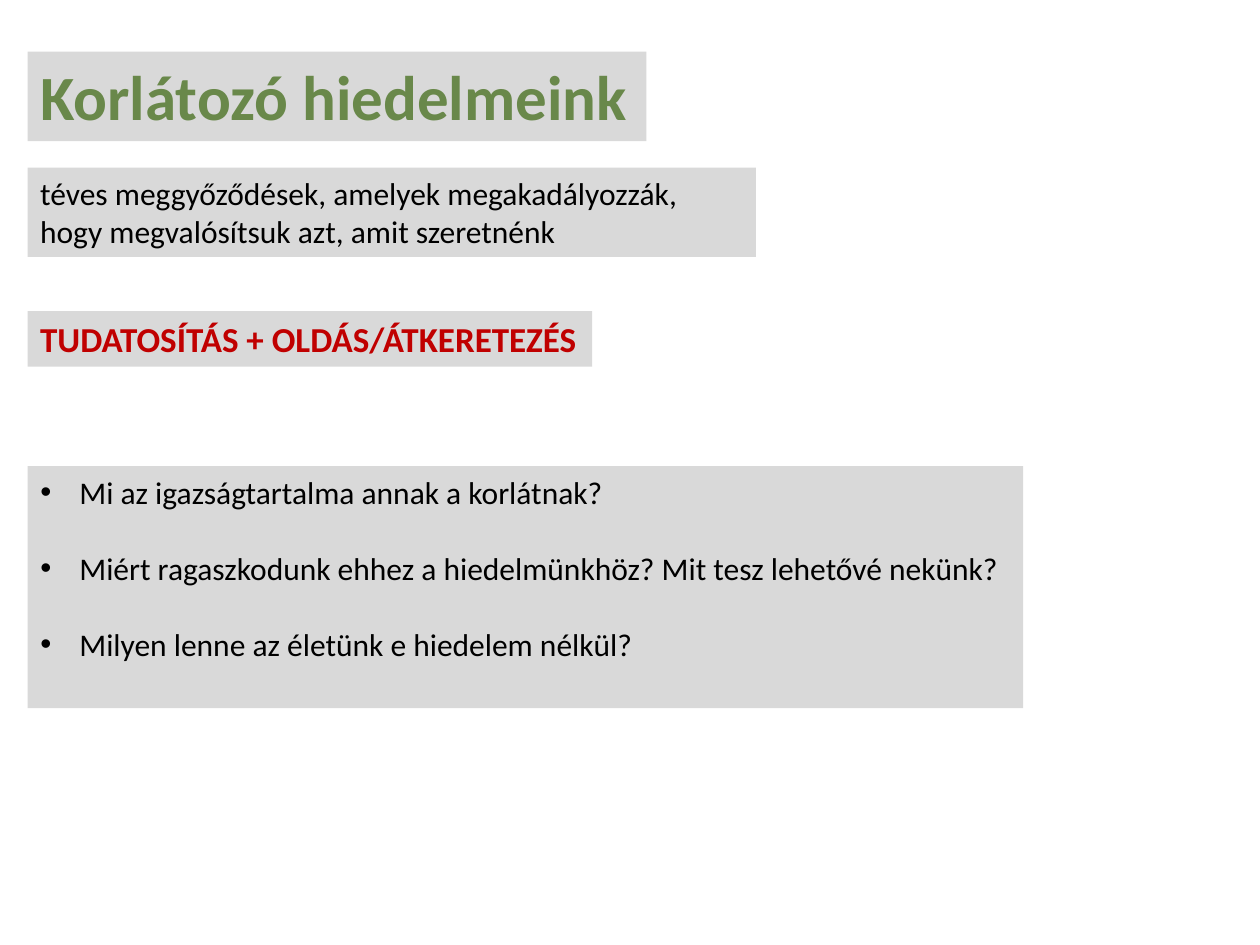
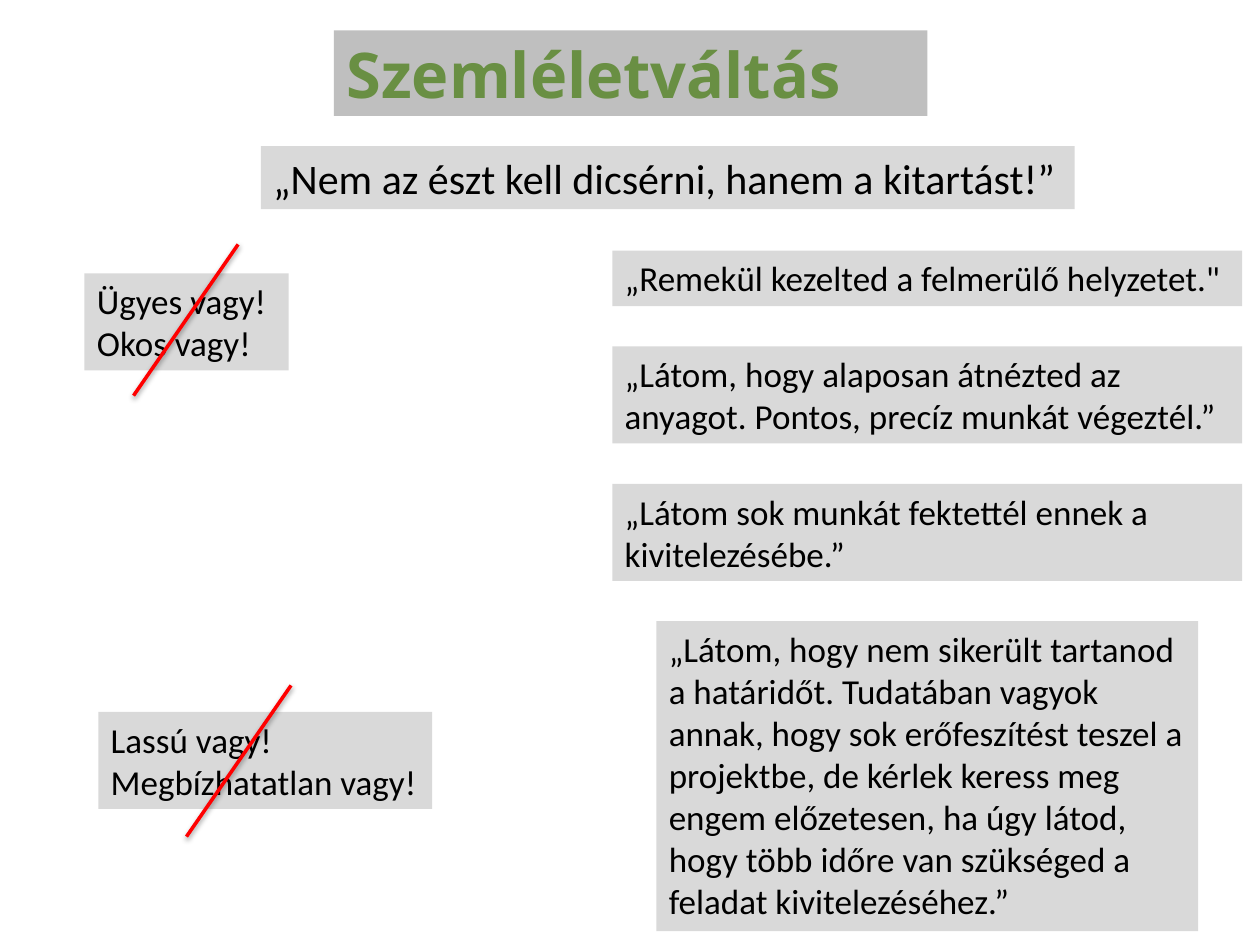
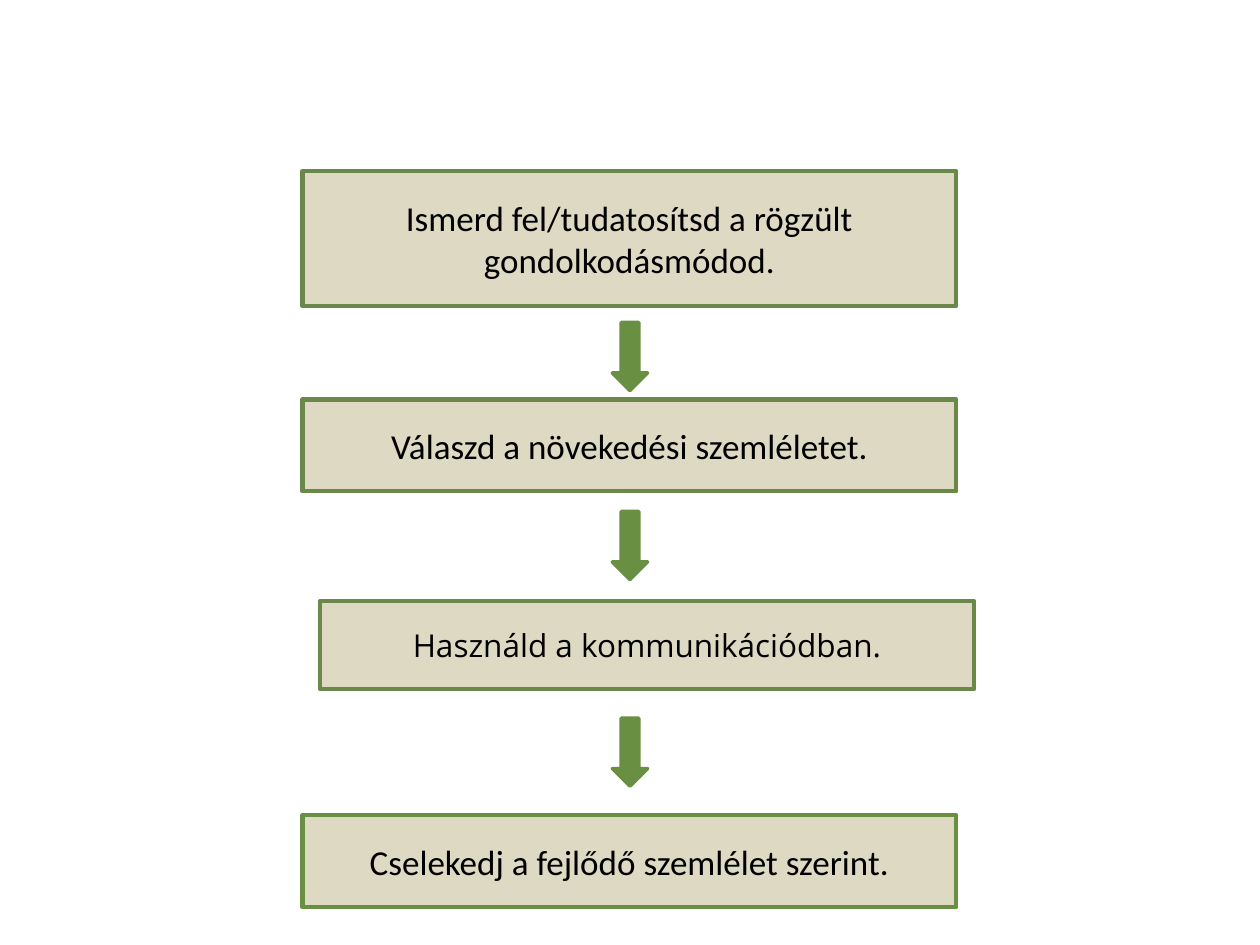
from lxml import etree
from pptx import Presentation
from pptx.dml.color import RGBColor
from pptx.enum.shapes import MSO_CONNECTOR, MSO_SHAPE
from pptx.enum.text import MSO_ANCHOR, MSO_AUTO_SIZE, PP_ALIGN
from pptx.oxml import parse_xml
from pptx.oxml.ns import nsdecls
from pptx.util import Inches, Pt

RECTANGLE, DOWN_ARROW = MSO_SHAPE.RECTANGLE, MSO_SHAPE.DOWN_ARROW
STRAIGHT = MSO_CONNECTOR.STRAIGHT
LEFT, CENTER = PP_ALIGN.LEFT, PP_ALIGN.CENTER
TOP, MIDDLE = MSO_ANCHOR.TOP, MSO_ANCHOR.MIDDLE
NO_AUTOFIT = MSO_AUTO_SIZE.NONE

TITLE_AND_CONTENT, TITLE_ONLY, BLANK = 1, 5, 6
GREY, DARK_GREY, BEIGE = "D9D9D9", "BFBFBF", "DDD9C3"
GREEN, LEAF_GREEN = "69884A", "698F43"
BLACK, DARK_RED, RED = "000000", "C00000", "FF0000"
CALIBRI, OPEN_SANS = "Calibri", "Open Sans"


# Shared helpers
def color(hex_value):
    return RGBColor.from_string(hex_value)


def set_outline(line, hex_value, width):
    line.color.rgb = color(hex_value)
    line.width = Pt(width)


def place(shape, box):
    for side, value in zip(("left", "top", "width", "height"), box):
        setattr(shape, side, Inches(value))


def paint(shape, fill):
    shape.fill.solid()
    shape.fill.fore_color.rgb = color(fill)


def write(shape, lines, size=20, font=CALIBRI, text_color=BLACK, bold=False,
          align=LEFT, anchor=TOP, inset=None, gap=0, after=0, indent=0):
    frame = shape.text_frame
    settings = {"word_wrap": True, "auto_size": NO_AUTOFIT, "vertical_anchor": anchor}
    if inset is not None:
        for side in ("left", "top", "right", "bottom"):
            settings["margin_" + side] = Inches(inset)
    for name, value in settings.items():
        setattr(frame, name, value)
    frame.text = "\n".join(lines)
    for index, para in enumerate(frame.paragraphs):
        para.alignment = align
        para.space_before = Pt(gap if index else 0)
        para.space_after = Pt(after)
        if indent:
            properties = para._p.get_or_add_pPr()
            properties.set("marL", str(Inches(indent)))
            properties.set("indent", str(-Inches(indent)))
        for span in para.runs:
            formats = {"name": font, "size": Pt(size), "bold": bold}
            for name, value in formats.items():
                setattr(span.font, name, value)
            span.font.color.rgb = color(text_color)


def add_panel(page, box, fill=GREY, kind=RECTANGLE, outline=None, width=2.5):
    shape = page.shapes.add_shape(kind, *map(Inches, box))
    shape.shadow.inherit = False
    paint(shape, fill)
    if outline:
        set_outline(shape.line, outline, width)
    else:
        shape.line.fill.background()
    return shape


def add_note(page, box, *lines, **formats):
    write(add_panel(page, box), lines, **formats)


def fill_placeholder(shape, box, lines, fill=GREY, **formats):
    place(shape, box)
    paint(shape, fill)
    write(shape, lines, **formats)


def set_title(page, box, text, **formats):
    fill_placeholder(page.shapes.title, box, [text], size=36, bold=True, **formats)


def add_strike(page, left, top):
    strike = page.shapes.add_connector(
        STRAIGHT, *map(Inches, (left + 0.83, top, left, top + 1.2)))
    set_outline(strike.line, RED, 2)
    effects = parse_xml(f"<a:effectLst {nsdecls('a')}/>")
    namespace = "{%s}" % effects.nsmap["a"]
    shadow = etree.SubElement(effects, namespace + "outerShdw", blurRad=str(Pt(3.1)),
                              dist=str(Pt(1.6)), dir="5400000", rotWithShape="0")
    tint = etree.SubElement(shadow, namespace + "srgbClr", val=BLACK)
    etree.SubElement(tint, namespace + "alpha", val="38000")
    strike._element.spPr.append(effects)


# Limiting beliefs
def build_beliefs(deck):
    page = deck.slides.add_slide(deck.slide_layouts[TITLE_AND_CONTENT])
    left = 0.22
    set_title(page, (left, 0.41, 4.91, 0.71), "Korlátozó hiedelmeink", text_color=GREEN)
    add_note(page, (left, 1.33, 5.78, 0.71),
             "téves meggyőződések, amelyek megakadályozzák, "
             "hogy megvalósítsuk azt, amit szeretnénk", size=18)
    add_note(page, (left, 2.47, 4.48, 0.44), "TUDATOSÍTÁS + OLDÁS/ÁTKERETEZÉS",
             text_color=DARK_RED, bold=True)
    questions = [
        "Mi az igazságtartalma annak a korlátnak?",
        "Miért ragaszkodunk ehhez a hiedelmünkhöz? Mit tesz lehetővé nekünk?",
        "Milyen lenne az életünk e hiedelem nélkül?",
    ]
    fill_placeholder(page.placeholders[1], (left, 3.7, 7.9, 1.92), questions,
                     size=18, gap=22, indent=0.31)


# Praise and criticism, reworded
def add_praises(page, left, top, width, gap):
    praises = [
        ("„Remekül kezelted a felmerülő helyzetet.\"", 0.44, 0),
        ("„Látom, hogy alaposan átnézted az anyagot. Pontos, precíz munkát végeztél.”",
         0.77, 0),
        ("„Látom sok munkát fektettél ennek a kivitelezésébe.”", 0.77, 0),
        ("„Látom, hogy nem sikerült tartanod a határidőt. Tudatában vagyok annak, "
         "hogy sok erőfeszítést teszel a projektbe, de kérlek keress meg engem "
         "előzetesen, ha úgy látod, hogy több időre van szükséged a feladat "
         "kivitelezéséhez.”", 2.46, 0.35),
    ]
    for text, height, margin in praises:
        add_note(page, (left + margin, top, width - 2 * margin, height), text)
        top += height + gap


def build_mindset_change(deck):
    page = deck.slides.add_slide(deck.slide_layouts[TITLE_ONLY])
    set_title(page, (2.65, 0.24, 4.71, 0.68), "Szemléletváltás", fill=DARK_GREY,
              font=OPEN_SANS, text_color=LEAF_GREEN, anchor=MIDDLE)
    add_note(page, (2.07, 1.16, 6.46, 0.5),
             "„Nem az észt kell dicsérni, hanem a kitartást!”", size=24)
    add_praises(page, 4.86, 1.99, 5, 0.32)
    add_note(page, (0.67, 2.17, 1.62, 0.77), "Ügyes vagy!", "Okos vagy!")
    add_note(page, (0.78, 5.65, 2.65, 0.77), "Lassú vagy!", "Megbízhatatlan vagy!")
    add_strike(page, 1.06, 1.94)
    add_strike(page, 1.48, 5.44)


# Steps towards a growth mindset
def build_steps(deck):
    page = deck.slides.add_slide(deck.slide_layouts[BLANK])
    steps = [
        ("Ismerd fel/tudatosítsd a rögzült gondolkodásmódod.", 2.4, 1.36, 1.07, GREEN, {}),
        ("Válaszd a növekedési szemléletet.", 2.4, 3.17, 0.73, GREEN, {}),
        ("Használd a kommunikációdban.", 2.54, 4.77, 0.7, GREEN,
         {"size": 18, "font": OPEN_SANS}),
        ("Cselekedj a fejlődő szemlélet szerint.", 2.4, 6.47, 0.73, LEAF_GREEN, {}),
    ]
    for text, left, top, height, outline, formats in steps:
        step = add_panel(page, (left, top, 5.19, height), BEIGE, outline=outline)
        write(step, [text], align=CENTER, inset=0.2, after=6, **formats)
    for top in (2.56, 4.06, 5.7):
        add_panel(page, (4.86, top, 0.28, 0.54), LEAF_GREEN, DOWN_ARROW, LEAF_GREEN, 2)


def main():
    deck = Presentation()
    deck.slide_width, deck.slide_height = Inches(10), Inches(7.5)
    build_beliefs(deck)
    build_mindset_change(deck)
    build_steps(deck)
    deck.save("out.pptx")


if __name__ == "__main__":
    main()
